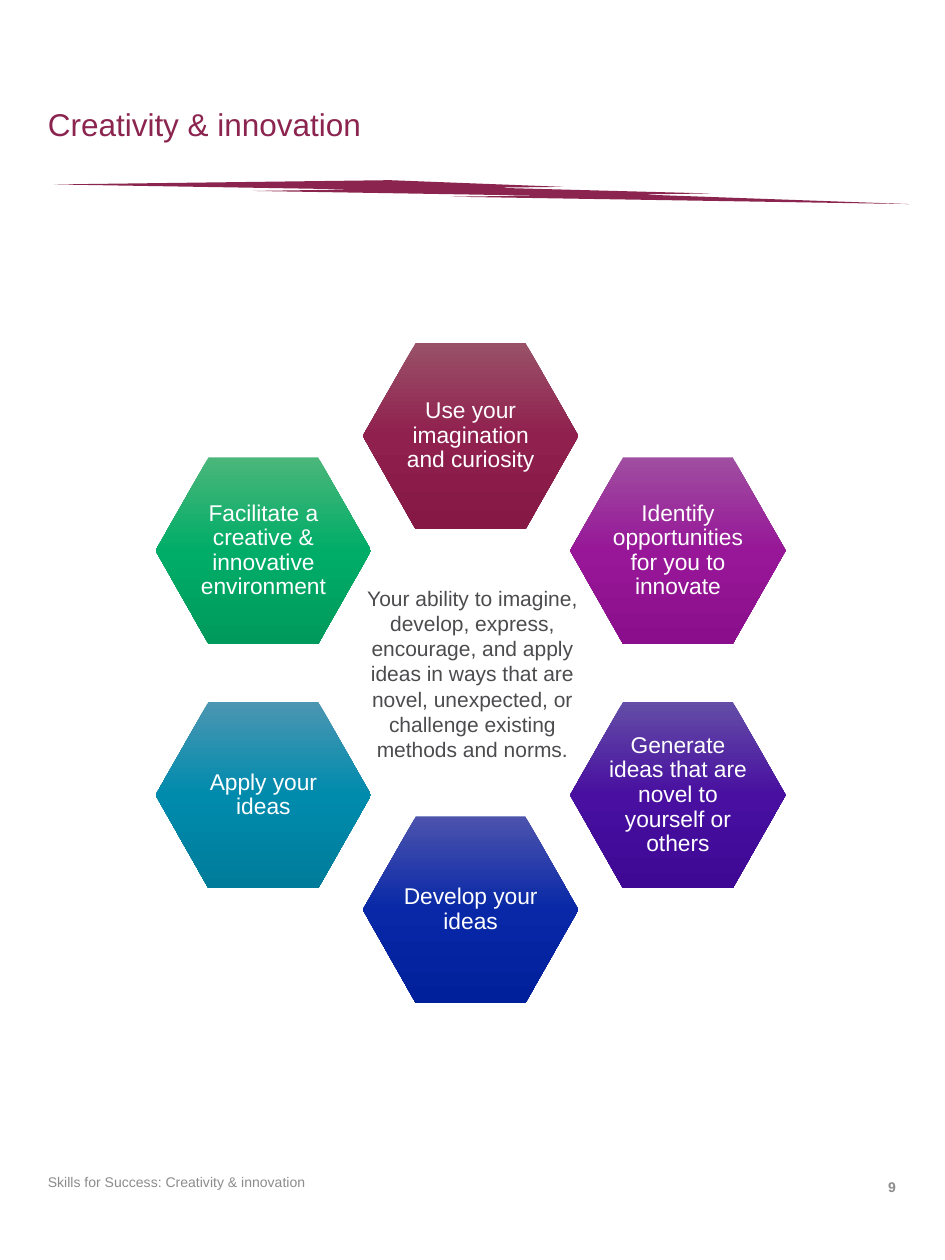
import copy

import pptx
import pptx.dml.color
import pptx.enum.shapes
import pptx.enum.text
import pptx.util

Inches = pptx.util.Inches
ALIGN = pptx.enum.text.PP_ALIGN

# Hexagon ring: size, centre of the ring and label with gradient colours
HEX_WIDTH, HEX_HEIGHT, HEX_INSET = 1.71, 1.48, 0.42
RING_X, RING_Y = 3.735, 5.34
SIDE_X, SIDE_Y, END_Y = 1.645, 0.97, 1.88
HEXAGONS = [
    (0, -END_Y, "Use your imagination and curiosity", ("995168", "90204E", "851845")),
    (SIDE_X, -SIDE_Y, "Identify opportunities for you to innovate", ("9F4EA0", "971798", "8B0F8C")),
    (SIDE_X, SIDE_Y, "Generate ideas that are novel to yourself or others", ("634DA6", "480FA0", "3E0894")),
    (0, END_Y, "Develop your ideas", ("4C53AD", "0828A7", "001F9B")),
    (-SIDE_X, SIDE_Y, "Apply your ideas", ("4B96B2", "008BAD", "007C9A")),
    (-SIDE_X, -SIDE_Y, "Facilitate a creative & innovative environment", ("4BB67A", "00AD68", "009A5C")),
]


def color(hex_string):
    return pptx.dml.color.RGBColor.from_string(hex_string)


def write_text(shape, text, size, font_color, margins=(0, 0), bold=False, **paragraph_format):
    """Fill a shape with one vertically centred paragraph."""
    frame = shape.text_frame
    horizontal, vertical = (Inches(margin) for margin in margins)
    frame_format = {
        "word_wrap": True,
        "vertical_anchor": pptx.enum.text.MSO_ANCHOR.MIDDLE,
        "margin_left": horizontal, "margin_right": horizontal,
        "margin_top": vertical, "margin_bottom": vertical,
    }
    paragraph = frame.paragraphs[0]
    run = paragraph.add_run()
    run.text = text
    font_format = {"name": "Arial", "size": pptx.util.Pt(size), "bold": bold}
    for target, values in ((frame, frame_format), (paragraph, paragraph_format),
                           (run.font, font_format)):
        for name, value in values.items():
            setattr(target, name, value)
    run.font.color.rgb = color(font_color)


def add_text(slide, box, *text_values, **text_format):
    shape = slide.shapes.add_textbox(*(Inches(length) for length in box))
    write_text(shape, *text_values, **text_format)


def add_rule(slide):
    """Draw the jagged stroke below the title."""
    shape = slide.shapes.add_shape(
        pptx.enum.shapes.MSO_SHAPE.LIGHTNING_BOLT,
        Inches(0.43), Inches(1.43), Inches(6.79), Inches(0.19))
    shape.shadow.inherit = False
    shape.fill.solid()
    shape.fill.fore_color.rgb = color("8B254F")
    shape.line.fill.background()


def fill_gradient(shape, colors):
    """Apply a three-stop gradient running from top to bottom."""
    fill = shape.fill
    fill.gradient()
    fill.gradient_angle = 270
    stop_list = fill._fill._gradFill.gsLst
    stop_list.insert(1, copy.deepcopy(stop_list[0]))
    for stop, position, hex_string in zip(fill.gradient_stops, (0, 0.5, 1), colors):
        stop.position = position
        stop.color.rgb = color(hex_string)


def add_hexagon(slide, center_x, center_y, text, colors):
    left, right = center_x - HEX_WIDTH / 2, center_x + HEX_WIDTH / 2
    top, bottom = center_y - HEX_HEIGHT / 2, center_y + HEX_HEIGHT / 2
    points = [(left, center_y), (left + HEX_INSET, top), (right - HEX_INSET, top),
              (right, center_y), (right - HEX_INSET, bottom), (left + HEX_INSET, bottom)]
    points = [(Inches(x), Inches(y)) for x, y in points]
    builder = slide.shapes.build_freeform(*points[0])
    builder.add_line_segments(points[1:], close=True)
    shape = builder.convert_to_shape()
    shape.shadow.inherit = False
    shape.line.fill.background()
    fill_gradient(shape, colors)
    write_text(shape, text, 13, "FFFFFF", margins=(0.3, 0.26),
               alignment=ALIGN.CENTER, line_spacing=0.9)


def main():
    presentation = pptx.Presentation()
    presentation.slide_width, presentation.slide_height = Inches(7.5), Inches(10)
    slide = presentation.slides.add_slide(presentation.slide_layouts[6])

    # Heading
    add_rule(slide)
    add_text(slide, (0.38, 0.53, 6.73, 0.94), "Creativity & innovation", 18, "8B254F",
             line_spacing=0.9)

    # Definition inside the ring of skills
    add_text(slide, (2.75, 4.64, 2, 1.41),
             "Your ability to imagine, develop, express, encourage, and apply ideas in ways "
             "that are novel, unexpected, or challenge existing methods and norms.",
             12, "4C4C4F", alignment=ALIGN.CENTER)
    for offset_x, offset_y, text, colors in HEXAGONS:
        add_hexagon(slide, RING_X + offset_x, RING_Y + offset_y, text, colors)

    # Footer and page number
    add_text(slide, (0.38, 9.2, 2.53, 0.36), "Skills for Success: Creativity & innovation",
             8, "8C8C8C", margins=(0, 0.05))
    add_text(slide, (6.33, 9.27, 0.78, 0.3), "9", 8, "8C8C8C", margins=(0, 0.05),
             bold=True, alignment=ALIGN.RIGHT)

    presentation.save("out.pptx")


if __name__ == "__main__":
    main()
